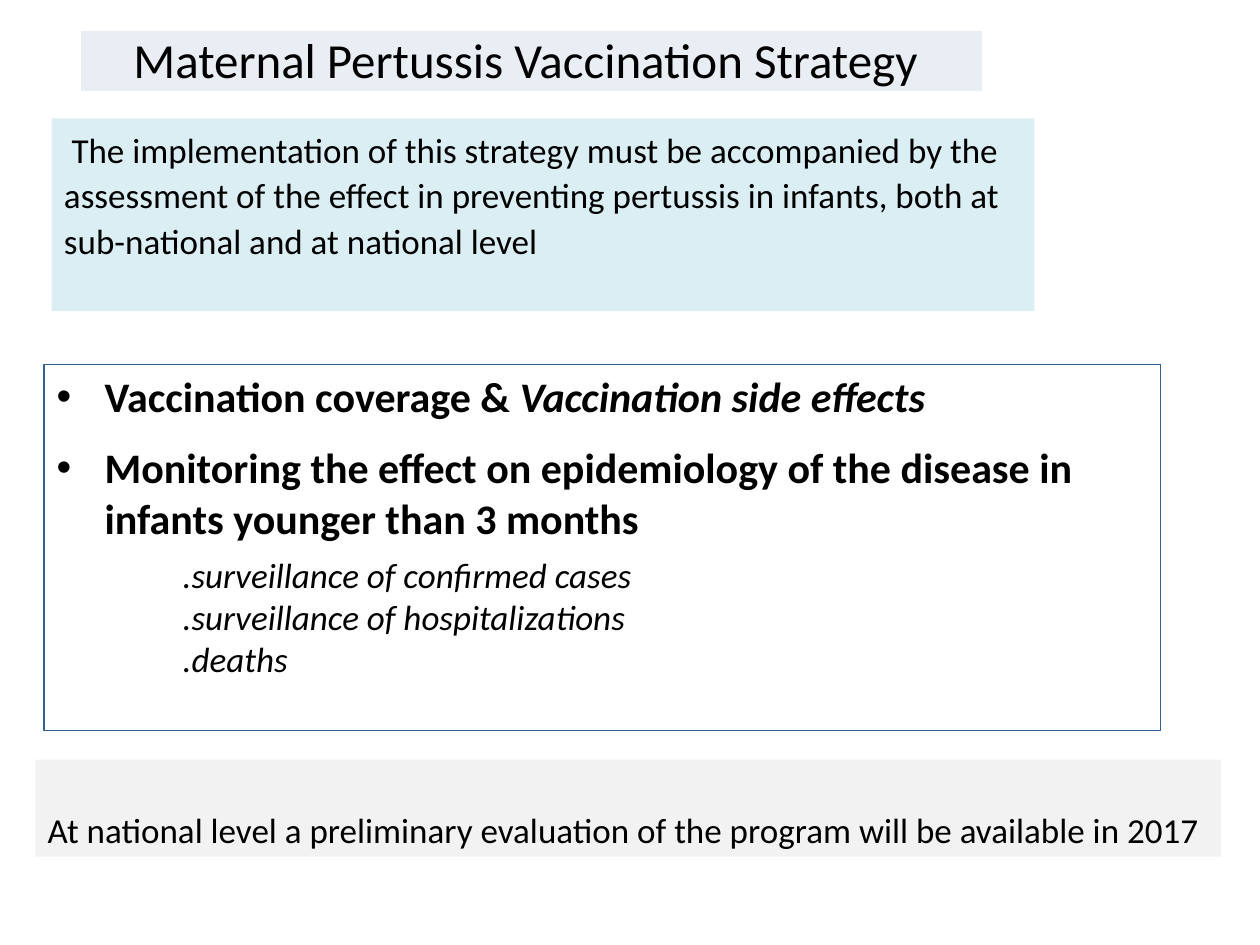
import pptx
import pptx.dml.color
import pptx.enum.text
import pptx.oxml.ns
import pptx.util
from lxml import etree

Inches = pptx.util.Inches
Pt = pptx.util.Pt
RGBColor = pptx.dml.color.RGBColor
Anchor = pptx.enum.text.MSO_ANCHOR

BLACK = RGBColor(0x00, 0x00, 0x00)
BLUE = RGBColor(0x37, 0x60, 0x92)
LAVENDER = RGBColor(0xE9, 0xED, 0xF4)
AQUA = RGBColor(0xDB, 0xEE, 0xF4)
GREY = RGBColor(0xF2, 0xF2, 0xF2)

TITLE = "Maternal Pertussis Vaccination Strategy"
STATEMENT = (
    "The implementation of this strategy must be accompanied by the assessment "
    "of the effect in preventing pertussis in infants, both at sub-national "
    "and at national level"
)
OUTLOOK = (
    "At national level a preliminary evaluation of the program "
    "will be available in 2017"
)
# Each topic is a list of (text, italic) spans
TOPICS = [
    [("Vaccination coverage & ", False), ("Vaccination side effects", True)],
    [("Monitoring the effect on epidemiology of the disease in infants "
      "younger than 3 months", False)],
]
MEASURES = [
    ".surveillance of confirmed cases",
    ".surveillance of hospitalizations",
    ".deaths",
]


def style(para, size, bold=False):
    font = para.font
    font.name = "Calibri"
    font.size = Pt(size)
    font.bold = bold
    font.color.rgb = BLACK


def set_indent(para, left, first, bullet=None):
    """Set the indents in inches, with a bullet character or none."""
    properties = para._p.get_or_add_pPr()
    properties.set("marL", str(Inches(left)))
    properties.set("indent", str(Inches(first)))
    tag = "a:buChar" if bullet else "a:buNone"
    mark = etree.SubElement(properties, pptx.oxml.ns.qn(tag))
    if bullet:
        mark.set("char", bullet)


def add_title_table(page, left, top, width, height):
    frame = page.shapes.add_table(
        1, 1, Inches(left), Inches(top), Inches(width), Inches(height))
    table = frame.table
    table.first_row = table.horz_banding = False
    cell = table.cell(0, 0)
    cell.fill.solid()
    cell.fill.fore_color.rgb = LAVENDER
    cell.margin_left = cell.margin_top = Inches(0.01)
    cell.margin_right = Inches(0.11)
    cell.margin_bottom = 0
    cell.vertical_anchor = Anchor.MIDDLE
    para = cell.text_frame.paragraphs[0]
    para.text = TITLE
    para.alignment = pptx.enum.text.PP_ALIGN.CENTER
    style(para, 28)


def add_panel(page, left, top, width, height, text, color, anchor):
    """Add a filled text box and return its paragraph."""
    box = page.shapes.add_textbox(
        Inches(left), Inches(top), Inches(width), Inches(height))
    box.fill.solid()
    box.fill.fore_color.rgb = color
    box.text_frame.word_wrap = True
    box.text_frame.vertical_anchor = anchor
    para = box.text_frame.paragraphs[0]
    para.text = text
    return para


def fill_list(box, left, top, width, height):
    box.left, box.top = Inches(left), Inches(top)
    box.width, box.height = Inches(width), Inches(height)
    box.line.color.rgb = BLUE
    box.line.width = Pt(0.75)
    frame = box.text_frame
    frame.auto_size = pptx.enum.text.MSO_AUTO_SIZE.NONE

    # Bulleted topics
    for index, spans in enumerate(TOPICS):
        para = frame.add_paragraph() if index else frame.paragraphs[0]
        para.space_before = Pt(6 if index else 0)
        para.space_after = Pt(6)
        set_indent(para, 0.38, -0.38, "•")
        style(para, 24, bold=True)
        for text, italic in spans:
            span = para.add_run()
            span.text = text
            span.font.italic = italic

    # Measures under the last topic
    for measure in MEASURES:
        para = frame.add_paragraph()
        para.text = measure
        para.level = 1
        para.space_before = Pt(0)
        set_indent(para, 1, 0)
        style(para, 20)
        para.font.italic = True


def main():
    deck = pptx.Presentation()
    deck.slide_width, deck.slide_height = Inches(10), Inches(7.5)
    page = deck.slides.add_slide(deck.slide_layouts[1])

    # The heading is a one-cell table, so the title placeholder goes
    heading = page.shapes.title._element
    heading.getparent().remove(heading)

    fill_list(page.placeholders[1], 0.35, 2.89, 8.86, 2.91)
    add_title_table(page, 0.64, 0.24, 7.16, 0.47)

    # Closing remark and opening statement
    outlook = add_panel(page, 0.28, 6.03, 9.41, 0.77, OUTLOOK, GREY, Anchor.BOTTOM)
    style(outlook, 20)
    statement = add_panel(page, 0.41, 0.94, 7.8, 1.53, STATEMENT, AQUA, Anchor.TOP)
    statement.line_spacing = Pt(26)
    set_indent(statement, 0, 0.06)
    style(statement, 20)

    deck.save("out.pptx")


if __name__ == "__main__":
    main()
